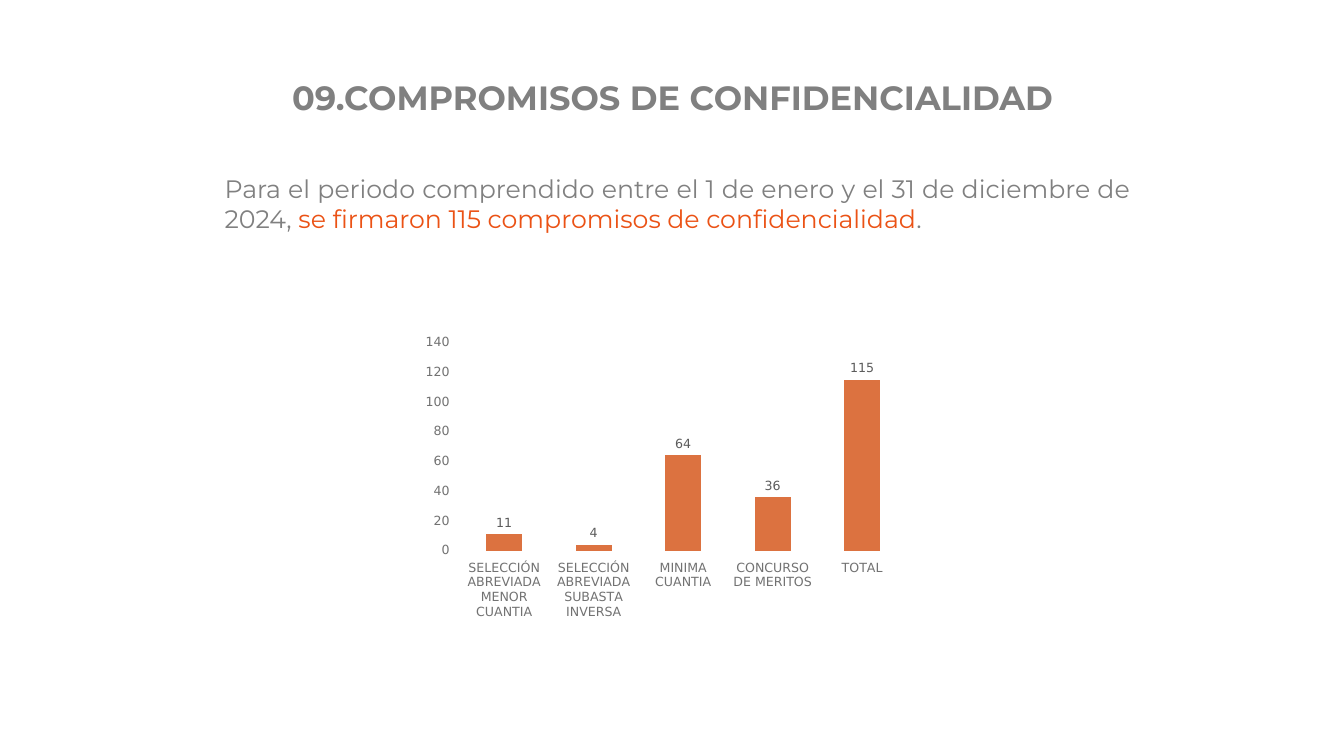
"""Builds the slide on confidentiality agreements signed in 2024."""
from lxml import etree
from pptx import Presentation
from pptx.chart.data import CategoryChartData
from pptx.dml.color import RGBColor
from pptx.enum.chart import XL_CHART_TYPE, XL_LABEL_POSITION
from pptx.enum.text import MSO_ANCHOR, PP_ALIGN
from pptx.oxml.ns import qn
from pptx.util import Inches, Pt

TITLE = "09.COMPROMISOS DE CONFIDENCIALIDAD"
BODY = [
    ("Para el periodo comprendido entre el 1 de enero y el 31 de diciembre de 2024, ", "gray"),
    ("se firmaron 115 compromisos de confidencialidad", "orange"),
    (".", "gray"),
]
SIGNED = {
    "SELECCIÓN ABREVIADA MENOR CUANTIA": 11,
    "SELECCIÓN ABREVIADA SUBASTA INVERSA": 4,
    "MINIMA CUANTIA": 64,
    "CONCURSO DE MERITOS": 36,
    "TOTAL": 115,
}
BOXES = {
    "title": (0.92, 0.75, 11.5, 0.47),
    "body": (2.13, 1.67, 9.18, 0.71),
    "chart": (4.22, 3.19, 5, 3),
}
PLOT = {"x": 0.065, "y": 0.069, "w": 0.89, "h": 0.689}
THEME = {
    "font": "Montserrat", "chart font": "DejaVu Sans",
    "title": 24, "body": 18, "chart": 10, "label": 9,
    "gray": "808080", "orange": "EB5215", "bar": "DC7240",
    "dark": "262626", "axis": "727272", "value": "5C5C5C",
}


def color(name):
    return RGBColor.from_string(THEME[name])


def place(name):
    return [Inches(n) for n in BOXES[name]]


def style(font, face, size, tint):
    font.name = THEME[face]
    font.size = Pt(THEME[size])
    font.color.rgb = color(tint)


def add_text(slide, name, align, anchor):
    frame = slide.shapes.add_textbox(*place(name)).text_frame
    frame.word_wrap = True
    frame.vertical_anchor = anchor
    para = frame.paragraphs[0]
    para.alignment = align
    return para


def set_plot(chart):
    area = chart._chartSpace.chart.plotArea
    for old in area.findall(qn("c:layout")):
        area.remove(old)
    layout = etree.Element(qn("c:layout"))
    manual = etree.SubElement(layout, qn("c:manualLayout"))
    rules = {"layoutTarget": "inner", "xMode": "edge", "yMode": "edge", **PLOT}
    for tag, val in rules.items():
        etree.SubElement(manual, qn(f"c:{tag}")).set("val", str(val))
    area.insert(0, layout)


def add_bars(slide):
    data = CategoryChartData()
    data.categories = list(SIGNED)
    data.add_series("Series 1", list(SIGNED.values()))
    kind = XL_CHART_TYPE.COLUMN_CLUSTERED
    chart = slide.shapes.add_chart(kind, *place("chart"), data).chart
    chart.has_title = chart.has_legend = False
    style(chart.font, "chart font", "chart", "dark")
    for axis in (chart.category_axis, chart.value_axis):
        axis.has_major_gridlines = False
        axis.format.line.fill.background()
        style(axis.tick_labels.font, "chart font", "label", "axis")
    scale = chart.value_axis
    scale.minimum_scale, scale.maximum_scale, scale.major_unit = 0, 140, 20
    plot = chart.plots[0]
    plot.gap_width = 150
    plot.vary_by_categories = False
    bars = plot.series[0]
    bars.format.fill.solid()
    bars.format.fill.fore_color.rgb = color("bar")
    labels = bars.data_labels
    labels.show_value = True
    labels.position = XL_LABEL_POSITION.OUTSIDE_END
    style(labels.font, "chart font", "label", "value")
    set_plot(chart)


def main():
    deck = Presentation()
    deck.slide_width, deck.slide_height = Inches(13.33), Inches(7.5)
    slide = deck.slides.add_slide(deck.slide_layouts[6])

    title = add_text(slide, "title", PP_ALIGN.CENTER, MSO_ANCHOR.BOTTOM)
    title.text = TITLE
    title.line_spacing = 0.9
    style(title.font, "font", "title", "gray")
    title.font.bold = True

    body = add_text(slide, "body", PP_ALIGN.JUSTIFY, MSO_ANCHOR.TOP)
    style(body.font, "font", "body", "gray")
    for words, tint in BODY:
        run = body.add_run()
        run.text = words
        run.font.color.rgb = color(tint)

    add_bars(slide)
    deck.save("out.pptx")


if __name__ == "__main__":
    main()
